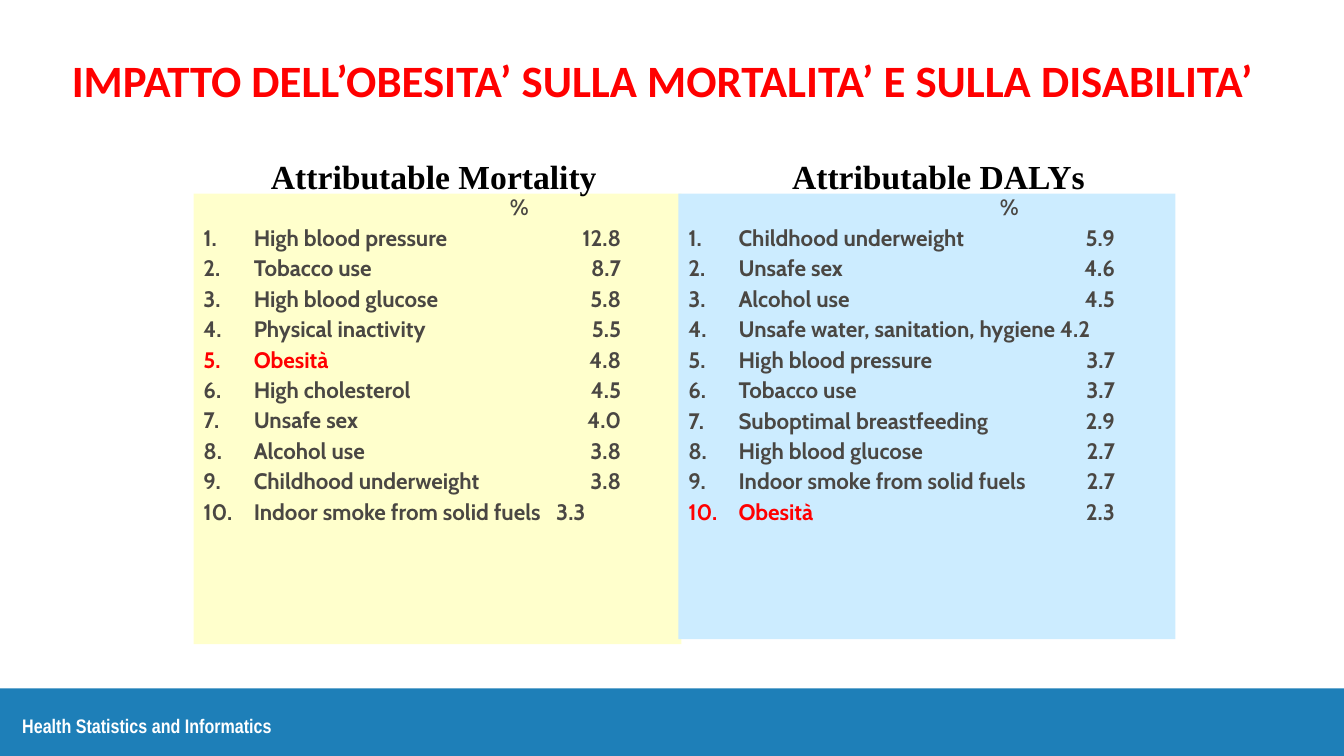
from dataclasses import dataclass

from lxml import etree
from pptx import Presentation
from pptx import util as u
from pptx.dml.color import RGBColor
from pptx.enum import shapes, text
from pptx.oxml import ns

# The grid has 10 columns and 10 rows to the inch.
CELL = u.Inches(0.1)
COLUMNS, ROWS = 133.33, 75
RED, GREY, WHITE, BLACK = "FF0000", "4A4743", "FFFFFF", "000000"
HIGHLIGHT = "Obesità"
INDENT = 5


@dataclass
class Area:
    column: float
    row: float
    columns: float
    rows: float

    def lengths(self) -> list[int]:
        return [grid(n) for n in (self.column, self.row, self.columns, self.rows)]


@dataclass
class Style:
    font: str
    size: float
    color: str


@dataclass
class Risk:
    name: str
    percent: str
    gap: str = "\t"
    tab: float = 0  # left tab used instead of the panel's right tab


@dataclass
class Panel:
    heading: str
    heading_area: Area
    area: Area
    fill: str
    percent_column: float
    value_tab: float
    risks: list[Risk]


BODY = Style("Cabin", 16, GREY)
HEADING = Style("Times New Roman", 24, BLACK)

PANELS = [
    Panel("Attributable Mortality", Area(25.9, 15, 34.3, 5),
          Area(19.2, 19.2, 48.4, 44.7), "FFFFCC", 30.4, 44.2, [
              Risk("High blood pressure", "12.8"),
              Risk("Tobacco use", "8.7"),
              Risk("High blood glucose", "5.8"),
              Risk("Physical inactivity", "5.5"),
              Risk("Obesità", "4.8"),
              Risk("High cholesterol", "4.5"),
              Risk("Unsafe sex", "4.0"),
              Risk("Alcohol use", "3.8"),
              Risk("Childhood underweight", "3.8"),
              Risk("Indoor smoke from solid fuels", "3.3", tab=30)]),
    Panel("Attributable DALYs", Area(77.6, 15, 31.4, 5),
          Area(67.3, 19.2, 49.3, 44.2), "CCECFF", 30.9, 43.7, [
              Risk("Childhood underweight", "5.9"),
              Risk("Unsafe sex", "4.6"),
              Risk("Alcohol use", "4.5"),
              Risk("Unsafe water, sanitation, hygiene", "4.2", gap=" "),
              Risk("High blood pressure", "3.7"),
              Risk("Tobacco use", "3.7"),
              Risk("Suboptimal breastfeeding", "2.9"),
              Risk("High blood glucose", "2.7"),
              Risk("Indoor smoke from solid fuels", "2.7"),
              Risk("Obesità", "2.3")]),
]


def grid(cells: float) -> int:
    return round(cells * CELL)


def rgb(color: str) -> RGBColor:
    return RGBColor.from_string(color)


def apply_style(run, style: Style, color: str = "") -> None:
    run.font.name = style.font
    run.font.size = u.Pt(style.size)
    run.font.bold = True
    run.font.color.rgb = rgb(color or style.color)


def add_rectangle(slide, area: Area, fill: str):
    shape = slide.shapes.add_shape(shapes.MSO_SHAPE.RECTANGLE, *area.lengths())
    shape.shadow.inherit = False
    shape.fill.solid()
    shape.fill.fore_color.rgb = rgb(fill)
    shape.line.fill.background()
    return shape


def add_label(slide, area: Area, words: str, style: Style, wrap: bool = True):
    """Add a one-line text box and return its text frame."""
    frame = slide.shapes.add_textbox(*area.lengths()).text_frame
    frame.word_wrap = wrap
    frame.text = words
    apply_style(frame.paragraphs[0].runs[0], style)
    return frame


def format_row(paragraph, margin: float, indent: float) -> None:
    """Set the alignment, indents and spacing of a line in a panel."""
    paragraph.alignment = text.PP_ALIGN.LEFT
    properties = paragraph._p.get_or_add_pPr()
    properties.set("marL", str(grid(margin)))
    properties.set("indent", str(grid(indent)))
    paragraph.line_spacing = 0.8
    paragraph.space_after = u.Pt(3.2)


def add_number_and_tab(paragraph, tab: float, alignment: str) -> None:
    properties = paragraph._p.get_or_add_pPr()
    etree.SubElement(properties, ns.qn("a:buAutoNum"), type="arabicPeriod")
    tabs = etree.SubElement(properties, ns.qn("a:tabLst"))
    etree.SubElement(tabs, ns.qn("a:tab"), pos=str(grid(tab)), algn=alignment)


def add_risk(frame, risk: Risk, value_tab: float) -> None:
    paragraph = frame.add_paragraph()
    add_number_and_tab(paragraph, risk.tab or value_tab, "l" if risk.tab else "r")
    format_row(paragraph, INDENT, -INDENT)
    paragraph.space_before = u.Pt(3.2)
    name_color = RED if risk.name == HIGHLIGHT else GREY
    for words, color in ((risk.name, name_color), (risk.gap + risk.percent, GREY)):
        run = paragraph.add_run()
        run.text = words
        apply_style(run, BODY, color)


def add_panel(slide, panel: Panel) -> None:
    frame = add_rectangle(slide, panel.area, panel.fill).text_frame
    frame.word_wrap = True
    frame.vertical_anchor = text.MSO_ANCHOR.TOP
    frame.text = "%"
    format_row(frame.paragraphs[0], panel.percent_column, 0)
    apply_style(frame.paragraphs[0].runs[0], BODY)
    for risk in panel.risks:
        add_risk(frame, risk, panel.value_tab)
    add_label(slide, panel.heading_area, panel.heading, HEADING, wrap=False)


def add_footer(slide) -> None:
    add_rectangle(slide, Area(0, 68.3, COLUMNS, 6.7), "1E7FB8")
    frame = add_label(slide, Area(2.2, 70.8, 52.9, 1.3),
                      "Health Statistics and Informatics",
                      Style("Arial Narrow", 14, WHITE))
    frame.margin_left = frame.margin_right = 0
    frame.margin_top = frame.margin_bottom = 0


def add_title(slide) -> None:
    frame = add_label(slide, Area(5.3, 2.5, 120.9, 10.7),
                      "IMPATTO DELL’OBESITA’ SULLA MORTALITA’ E SULLA DISABILITA’",
                      Style("Calibri", 32, RED))
    frame.vertical_anchor = text.MSO_ANCHOR.MIDDLE
    frame.paragraphs[0].alignment = text.PP_ALIGN.CENTER


def main() -> None:
    presentation = Presentation()
    presentation.slide_width = grid(COLUMNS)
    presentation.slide_height = grid(ROWS)
    slide = presentation.slides.add_slide(presentation.slide_layouts[6])
    add_footer(slide)
    add_title(slide)
    for panel in PANELS:
        add_panel(slide, panel)
    presentation.save("out.pptx")


if __name__ == "__main__":
    main()
